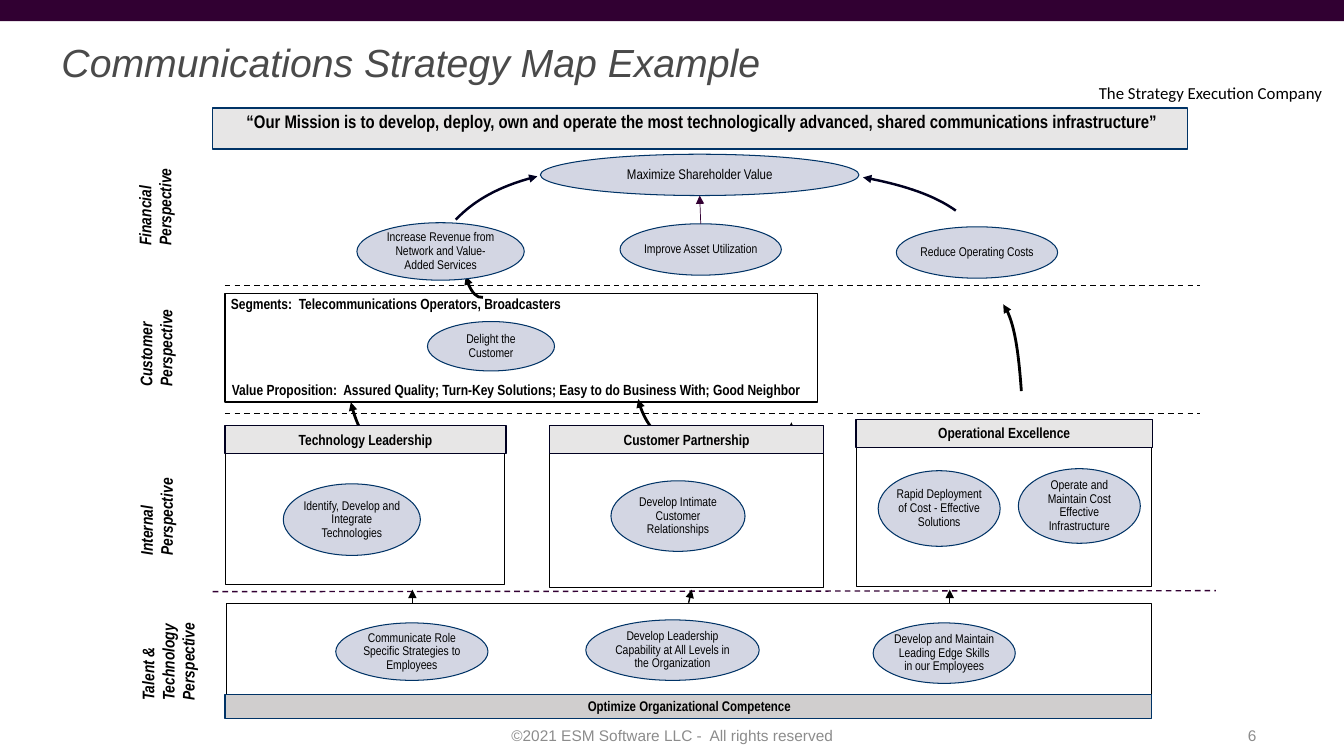
from dataclasses import dataclass
from typing import NamedTuple

import pptx
import pptx.dml.color
import pptx.enum.dml
import pptx.enum.shapes
import pptx.enum.text
import pptx.oxml
import pptx.oxml.ns
import pptx.util
from pptx.util import Inches

SHAPE = pptx.enum.shapes.MSO_SHAPE
ALIGN = pptx.enum.text.PP_ALIGN
ANCHOR = pptx.enum.text.MSO_ANCHOR
qn = pptx.oxml.ns.qn


# Theme
@dataclass(frozen=True)
class Theme:
    plum: str = "310032"
    plum_line: str = "320033"
    black: str = "000000"
    white: str = "FFFFFF"
    navy: str = "003366"
    ink: str = "000020"
    goal: str = "D3D6E3"
    header: str = "E7E6E6"
    base: str = "D0CECE"
    title: str = "4A4A4A"
    footer: str = "8C8C8C"
    sans: str = "Arial"
    narrow: str = "Arial Narrow"
    tagline: str = "Calibri"
    title_size: float = 28
    mission_size: float = 13
    label_size: float = 12
    footer_size: float = 11
    header_size: float = 10.5
    goal_size: float = 9


T = Theme()


class Box(NamedTuple):
    left: float
    top: float
    width: float
    height: float


class Style(NamedTuple):
    font: str = T.narrow
    size: float = T.header_size
    color: str = T.black
    bold: bool = False
    italic: bool = False
    align: ALIGN = ALIGN.LEFT
    anchor: ANCHOR = ANCHOR.TOP
    insets: tuple = (0.1, 0.05, 0.1, 0.05)
    spacing: float = 1
    hanging: float = 0


class Goal(NamedTuple):
    text: str
    box: Box
    size: float = T.goal_size


class Arc(NamedTuple):
    points: tuple  # tip, two control points, far end
    color: str = T.black
    width: float = 2


class Rule(NamedTuple):
    start: tuple
    end: tuple
    color: str = T.black
    width: float = 1


PANEL = Style(bold=True, insets=(0.07, 0.05, 0.05, 0.05), spacing=0.9, hanging=0.12)
HEADER = Style(bold=True, align=ALIGN.CENTER)
LABEL = Style(size=T.label_size, bold=True, italic=True)
GOAL = Style(align=ALIGN.CENTER, anchor=ANCHOR.MIDDLE, insets=(0, 0.03, 0, 0.03), spacing=0.9)
FOOTER = Style(T.sans, T.footer_size, T.footer, anchor=ANCHOR.MIDDLE)

# Content
ARCS = [
    Arc(((4.62, 2.74), (4.65, 2.87), (4.73, 2.96), (4.79, 2.95))),
    Arc(((6.33, 3.96), (6.4, 4.27), (6.66, 4.48), (6.92, 4.42))),
    Arc(((3.48, 3.99), (3.57, 4.39), (3.84, 4.67), (4.1, 4.62))),
    Arc(((8.56, 1.76), (8.94, 1.83), (9.27, 1.94), (9.48, 2.09)), T.ink, 1.75),
    Arc(((5.33, 1.75), (5, 1.83), (4.71, 1.98), (4.52, 2.18)), T.ink, 1.75),
    Arc(((9.95, 3.02), (10.04, 3.13), (10.1, 3.45), (10.13, 3.88))),
]
DIVIDERS = [
    Rule((2.23, 2.83), (11.9, 2.83)),
    Rule((2.23, 4.1), (11.9, 4.1)),
    Rule((2.11, 5.87), (12.06, 5.86), T.plum_line),
]
PERSPECTIVES = [
    ("Financial Perspective", Box(0.97, 1.68, 1.17, 0.54)),
    ("Customer Perspective", Box(1.17, 3.01, 1.05, 0.8)),
    ("Internal Perspective", Box(1.04, 4.81, 1.06, 0.54)),
    ("Talent & Technology Perspective", Box(1.04, 6.07, 1.25, 0.7)),
]
THEMES = [
    ("Technology Leadership", Box(2.23, 4.22, 2.79, 0.28), Box(2.23, 4.44, 2.77, 1.36)),
    ("Customer Partnership", Box(5.45, 4.22, 2.72, 0.28), Box(5.45, 4.35, 2.71, 1.48)),
    ("Operational Excellence", Box(8.49, 4.16, 2.94, 0.28), Box(8.49, 4.43, 2.93, 1.39)),
]
SHAREHOLDER = Goal("Maximize Shareholder Value", Box(5.36, 1.53, 3.16, 0.41), 10)
ASSETS = Goal("Improve Asset Utilization", Box(6.15, 2.22, 1.6, 0.51))
GOALS = [
    SHAREHOLDER,
    Goal("Increase Revenue from Network and Value-Added Services", Box(3.54, 2.21, 1.66, 0.57)),
    Goal("Reduce Operating Costs", Box(8.89, 2.25, 1.6, 0.51)),
    Goal("Delight the Customer", Box(4.24, 3.19, 1.26, 0.49)),
    Goal("Identify, Develop and Integrate Technologies", Box(2.81, 4.8, 1.36, 0.71)),
    Goal("Develop Intimate Customer Relationships", Box(6.06, 4.77, 1.33, 0.7)),
    Goal("Rapid Deployment of Cost - Effective Solutions", Box(8.71, 4.67, 1.21, 0.75)),
    Goal("Operate and Maintain Cost Effective Infrastructure", Box(10.1, 4.65, 1.21, 0.74)),
    Goal("Communicate Role Specific Strategies to Employees", Box(3.33, 6.18, 1.51, 0.57)),
    Goal("Develop Leadership Capability at All Levels in the Organization",
         Box(5.81, 6.15, 1.72, 0.6)),
    Goal("Develop and Maintain Leading Edge Skills in our Employees", Box(8.66, 6.18, 1.41, 0.6)),
]


# Drawing functions
def rgb(color: str) -> pptx.dml.color.RGBColor:
    return pptx.dml.color.RGBColor.from_string(color)


def write(sp, text: str, style: Style) -> None:
    tf = sp.text_frame
    tf.auto_size = pptx.enum.text.MSO_AUTO_SIZE.NONE
    tf.word_wrap = True
    tf.vertical_anchor = style.anchor
    tf.margin_left, tf.margin_top, tf.margin_right, tf.margin_bottom = map(Inches, style.insets)
    p = tf.paragraphs[0]
    p.text = text
    p.alignment = style.align
    p.line_spacing = style.spacing
    p.space_before = pptx.util.Pt(0)
    if style.hanging:
        pPr = p._p.get_or_add_pPr()
        pPr.set("marL", str(Inches(style.hanging)))
        pPr.set("indent", str(-Inches(style.hanging)))
    font = p.font
    font.name, font.size = style.font, pptx.util.Pt(style.size)
    font.bold, font.italic = style.bold, style.italic
    font.color.rgb = rgb(style.color)


def add_text(s, text: str, box: Box, style: Style, rotation: float = 0) -> None:
    sp = s.shapes.add_textbox(*map(Inches, box))
    sp.rotation = rotation
    write(sp, text, style)


def add_box(s, box: Box, fill: str = "", line: str = "", width: float = 1, kind=SHAPE.RECTANGLE):
    sp = s.shapes.add_shape(kind, *map(Inches, box))
    sp.shadow.inherit = False
    if fill:
        sp.fill.solid()
        sp.fill.fore_color.rgb = rgb(fill)
    else:
        sp.fill.background()
    if line:
        set_line(sp, line, width)
    else:
        sp.line.fill.background()
    return sp


def set_line(sp, color: str, width: float, arrow: str = "") -> None:
    sp.line.color.rgb = rgb(color)
    sp.line.width = pptx.util.Pt(width)
    if arrow:
        ln = sp.line._get_or_add_ln()
        ln.append(ln.makeelement(qn(f"a:{arrow}"), {"type": "triangle"}))


def add_goal(s, goal: Goal):
    sp = add_box(s, goal.box, T.goal, T.navy, 0.75, SHAPE.OVAL)
    write(sp, goal.text, GOAL._replace(size=goal.size))
    return sp


def add_rule(s, rule: Rule, arrow: str = ""):
    ends = map(Inches, rule.start + rule.end)
    line = s.shapes.add_connector(pptx.enum.shapes.MSO_CONNECTOR.STRAIGHT, *ends)
    set_line(line, rule.color, rule.width, arrow)
    spPr = line._element.spPr
    spPr.append(spPr.makeelement(qn("a:effectLst"), {}))
    return line


def add_arc(s, arc: Arc) -> None:
    points = [tuple(map(Inches, point)) for point in arc.points]
    builder = s.shapes.build_freeform(*points[0])
    builder.add_line_segments(points[1:], close=False)
    sp = builder.convert_to_shape()
    sp.shadow.inherit = False
    sp.fill.background()
    set_line(sp, arc.color, arc.width, "headEnd")
    # Turn the three segments into one Bezier curve
    path = sp._element.spPr.find(".//" + qn("a:path"))
    curve = path.makeelement(qn("a:cubicBezTo"), {})
    for segment in path.findall(qn("a:lnTo")):
        curve.append(segment[0])
        path.remove(segment)
    path.append(curve)


def main() -> None:
    prs = pptx.Presentation()
    prs.slide_width, prs.slide_height = Inches(13.33), Inches(7.5)
    s = prs.slides.add_slide(prs.slide_layouts[5])

    # Title, top bar and footer
    title = s.shapes.title
    title.left, title.top, title.width, title.height = map(Inches, Box(0.51, 0.38, 9.25, 0.57))
    write(title, "Communications Strategy Map Example",
          Style(T.sans, T.title_size, T.title, italic=True, spacing=0.9))
    add_box(s, Box(0, 0, 13.33, 0.21), T.plum)
    add_text(s, "The Strategy Execution Company", Box(10.8, 0.77, 2.53, 0.3),
             Style(T.tagline, T.label_size))
    add_text(s, "©2021 ESM Software LLC -  All rights reserved", Box(4.42, 7.1, 4.5, 0.4),
             FOOTER._replace(align=ALIGN.CENTER))
    add_text(s, "6", Box(9.56, 7.1, 3, 0.4), FOOTER._replace(align=ALIGN.RIGHT))

    # Curved arrows, dividers and perspective labels
    for arc in ARCS:
        add_arc(s, arc)
    for divider in DIVIDERS:
        add_rule(s, divider).line.dash_style = pptx.enum.dml.MSO_LINE.DASH
    for text, box in PERSPECTIVES:
        add_text(s, text, box, LABEL, 270)

    # Mission and customer panel
    mission = add_box(s, Box(2.11, 1.07, 9.67, 0.41), T.header, T.navy)
    write(mission, "“Our Mission is to develop, deploy, own and operate the most technologically "
          "advanced, shared communications infrastructure”",
          PANEL._replace(size=T.mission_size, align=ALIGN.CENTER))
    add_box(s, Box(2.23, 2.91, 5.88, 1.08), line=T.black)
    add_text(s, "Segments:  Telecommunications Operators, Broadcasters",
             Box(2.22, 2.9, 5.89, 0.21), PANEL)
    add_text(s, "Value Proposition:  Assured Quality; Turn-Key Solutions; "
             "Easy to do Business With; Good Neighbor", Box(2.23, 3.75, 5.88, 0.21), PANEL)

    # Internal themes
    add_rule(s, Rule((7.84, 4.4), (7.85, 4.19), width=2), "tailEnd")
    for text, header, frame in THEMES:
        add_box(s, frame, T.white, T.black, 0.25)
        write(add_box(s, header, T.header, T.ink), text, HEADER)

    # Talent panel and its upward arrows
    talent = add_box(s, Box(2.24, 5.98, 9.18, 0.93), T.white, T.black, 0.25)
    for x in (4.09, 9.42):
        add_rule(s, Rule((x, 5.98), (x, 5.85)), "tailEnd")
    add_rule(s, Rule((6.85, 5.98), (6.86, 5.85)), "tailEnd").begin_connect(talent, 0)
    competence = add_box(s, Box(2.23, 6.89, 9.19, 0.24), T.base, T.navy)
    write(competence, "Optimize Organizational Competence",
          PANEL._replace(size=10, align=ALIGN.CENTER))

    # Goals
    for goal in GOALS:
        add_goal(s, goal)
    assets = add_goal(s, ASSETS)
    to_shareholder = add_rule(s, Rule((6.95, 2.22), (6.94, 1.94), T.plum_line, 0.5), "tailEnd")
    to_shareholder.begin_connect(assets, 0)

    prs.save("out.pptx")


if __name__ == "__main__":
    main()
